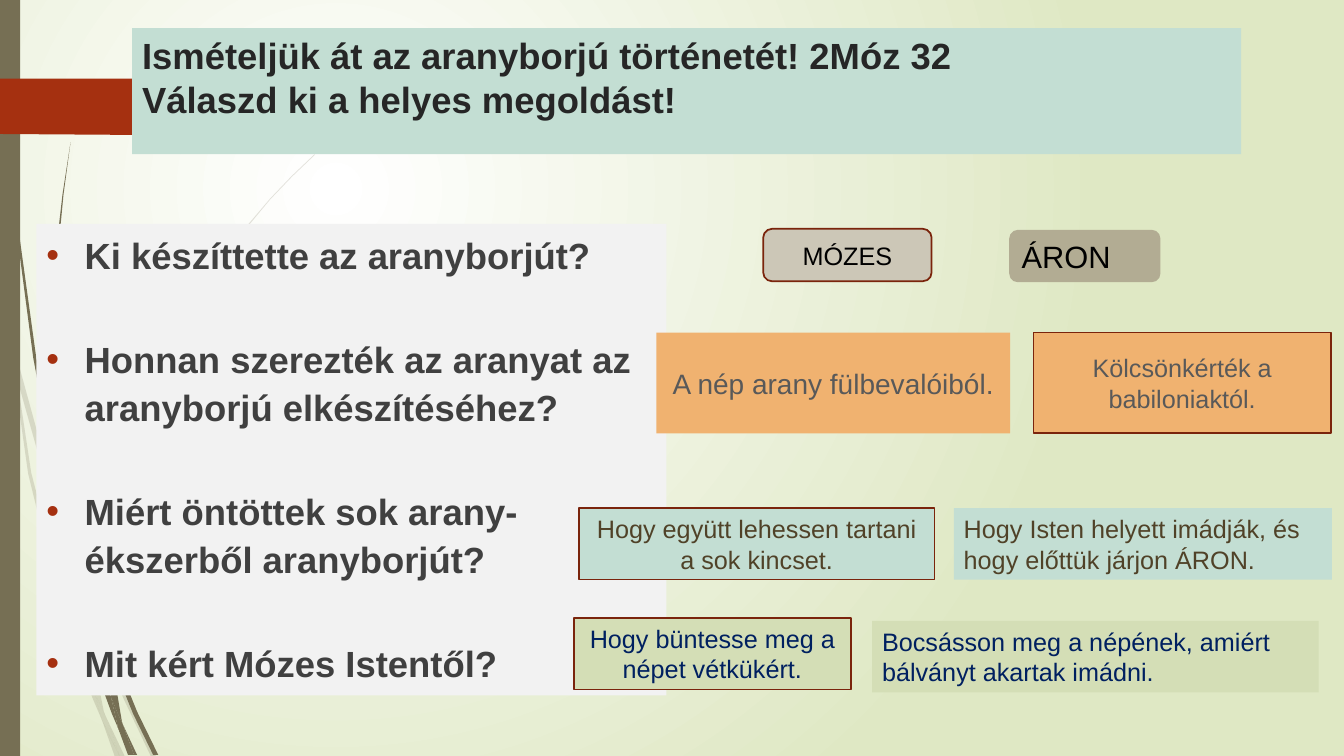
from lxml import etree
from pptx import Presentation, util as u
from pptx.dml.color import RGBColor
from pptx.enum import shapes, text
from pptx.oxml.ns import qn

WHITE = RGBColor(0xFF, 0xFF, 0xFF)
PALE_GREEN = RGBColor(0xDF, 0xE8, 0xC4)
OLIVE = RGBColor(0x76, 0x6F, 0x54)
RUST = RGBColor(0xA5, 0x30, 0x10)
DARK_RUST = RGBColor(0x7A, 0x24, 0x0C)
MINT = RGBColor(0xC3, 0xDE, 0xD3)
LIGHT_GREY = RGBColor(0xF2, 0xF2, 0xF2)
ORANGE = RGBColor(0xF0, 0xB2, 0x70)
LIME = RGBColor(0xD4, 0xDE, 0xB6)
SAND = RGBColor(0xCC, 0xC7, 0xB7)
TAUPE = RGBColor(0xB2, 0xAC, 0x93)
BLACK = RGBColor(0x00, 0x00, 0x00)
TITLE_INK = RGBColor(0x26, 0x26, 0x26)
BODY_INK = RGBColor(0x40, 0x40, 0x40)
GREY_INK = RGBColor(0x59, 0x59, 0x59)
BROWN_INK = RGBColor(0x50, 0x42, 0x28)
NAVY_INK = RGBColor(0x00, 0x20, 0x60)

ROWS = 75  # square grid cells, 75 to the slide's height
RECT = shapes.MSO_SHAPE.RECTANGLE
ROUNDED = shapes.MSO_SHAPE.ROUNDED_RECTANGLE
ALTERNATE = shapes.MSO_SHAPE.FLOWCHART_ALTERNATE_PROCESS
LEFT, CENTER = text.PP_ALIGN.LEFT, text.PP_ALIGN.CENTER
TOP, MIDDLE = text.MSO_ANCHOR.TOP, text.MSO_ANCHOR.MIDDLE

# Outlines of the grass blades, in grid cells
FAINT_BLADES = [
    [(1.1, 35), (.9, 32.2), (0, 28.2), (0, 29.9), (1, 34.4)],
    [(5.8, 52.2), (8.4, 59.9), (8.5, 58.6), (6.2, 52), (1.4, 34.5), (1.7, 37.6)],
    [(9.2, 60.7), (8.8, 59.6), (8.8, 61), (12.3, 69.4), (15, 75.1), (15.5, 75.1),
     (12.7, 69.2)],
    [(11.9, 75.1), (12.4, 75.1), (10.5, 71.1)],
    [(9.3, 68.3), (7, 61.9), (3.1, 46.9), (1.7, 37.6), (1.1, 35), (2.8, 47),
     (6.5, 62.1), (9.2, 69.3), (10.1, 71.4), (9.9, 70.7)],
    [(8.4, 59.9), (8.7, 64.6), (9.3, 68.3), (9.6, 69.2), (10.5, 71.1),
     (10.3, 70.6), (9.1, 64.6), (8.8, 61)],
    [(8.8, 58.4), (11, 46.2), (16, 34.9), (22.9, 24.5), (26.8, 19.8), (29, 17.5),
     (31.2, 15.4), (31.2, 15.3), (28.9, 17.5), (26.8, 19.7), (22.8, 24.4),
     (15.8, 34.8), (10.7, 46.1), (8.5, 58.4), (8.8, 59.6)],
    [(10.1, 71.4), (11.4, 75.1), (11.9, 75.1)],
    [(9.6, 69.2), (9.3, 68.3), (9.9, 70.7), (10.1, 71.4), (11.9, 75.1), (10.5, 71.1)],
]
DARK_BLADES = [
    [(.7, 11), (1.7, 23.3), (3.3, 35.5), (5.6, 47.7), (5.7, 48.1), (5.5, 45.7),
     (5.5, 45.3), (3.6, 35.5), (1.9, 23.2), (.8, 10.9), (.5, 4.8), (.4, 0),
     (.3, 0), (.4, 4.8)],
    [(11.3, 64.9), (11, 64.1), (11.1, 65.6), (13.2, 70.8), (15.2, 74.9),
     (15.7, 74.9), (13.6, 70.6)],
    [(11, 69.1), (9.8, 65.7), (7.2, 55.6), (6.4, 50.5), (5.7, 47.7), (6.8, 55.7),
     (9.3, 65.9), (11.1, 70.8), (11.7, 72.2), (11.6, 71.7)],
    [(6, 47.2), (5.8, 45.3), (5.4, 34.9), (5.8, 24.5), (6.3, 19.3), (7, 14.1),
     (6.2, 19.3), (5.6, 24.5), (5.2, 34.9), (5.5, 44.9)],
    [(13.3, 74.9), (13.6, 74.9), (12.2, 71.9)],
    [(11.7, 72.2), (12.7, 74.9), (13.1, 74.9)],
    [(10.6, 64.5), (11, 69.1), (11.6, 70.6), (12.2, 71.9), (12.1, 71.6),
     (11.1, 65.6), (10.9, 65.1)],
    [(11.6, 70.6), (11, 69.1), (11.6, 71.7), (11.7, 72.2), (13, 74.9),
     (13.3, 74.9), (12.2, 71.9)],
]
FLAG = [(17.3, 10.8), (14.8, 13.3), (14.6, 13.4), (0, 13.3), (0, 7.8), (14.6, 7.8),
        (14.8, 7.9), (17.3, 10.4), (17.4, 10.6)]

# Kind, place, fill, outlined, words, format
ANSWERS = [
    (ALTERNATE, (100.1, 22.8, 15, 5.2), TAUPE, False, "ÁRON", dict(size=22)),
    (RECT, (65.1, 33, 35.1, 10), ORANGE, False, "A nép arany fülbevalóiból.",
     dict(size=20, color=GREY_INK, align=CENTER)),
    (RECT, (94.6, 50.4, 37.5, 7.1), MINT, False,
     "Hogy Isten helyett imádják, és hogy előttük járjon ÁRON.",
     dict(color=BROWN_INK)),
    (RECT, (86.5, 61.6, 44.3, 7.1), LIME, False,
     "Bocsásson meg a népének, amiért bálványt akartak imádni.",
     dict(color=NAVY_INK)),
    (ROUNDED, (75.7, 22.7, 16.7, 5.2), SAND, True, "MÓZES", dict(align=CENTER)),
    (RECT, (102.5, 33, 29.5, 10), ORANGE, True, "Kölcsönkérték a babiloniaktól.",
     dict(color=GREY_INK, align=CENTER)),
    (RECT, (57.4, 50.4, 35.3, 7.1), MINT, True,
     "Hogy együtt lehessen tartani a sok kincset.",
     dict(color=BROWN_INK, align=CENTER)),
    (RECT, (56.9, 61.3, 27.5, 7.1), LIME, True,
     "Hogy büntesse meg a népet vétkükért.", dict(color=NAVY_INK, align=CENTER)),
]
QUESTIONS = [
    "Ki készíttette az aranyborjút?",
    "Honnan szerezték az aranyat az aranyborjú elkészítéséhez?",
    "Miért öntöttek sok arany- ékszerből aranyborjút?",
    "Mit kért Mózes Istentől?",
]


def write(para, words, size=18, color=BLACK, bold=False, align=LEFT, before=0, spacing=1.0):
    """Fill one paragraph; a newline becomes a line break."""
    para.alignment = align
    para.space_before, para.line_spacing = u.Pt(before), spacing
    for number, line in enumerate(words.split("\n")):
        if number:
            para.add_line_break()
        span = para.add_run()
        span.text = line
        span.font.name, span.font.size = "Arial", u.Pt(size)
        span.font.bold, span.font.color.rgb = bold, color


class Page:
    def __init__(self, deck):
        self.cell = deck.slide_height / ROWS
        self.slide = deck.slides.add_slide(deck.slide_layouts[1])

    def cells(self, values):
        return [u.Emu(round(value * self.cell)) for value in values]

    def background(self, inner, outer):
        fill = self.slide.background.fill
        fill.gradient()
        for stop, color in zip(fill.gradient_stops, (inner, outer)):
            stop.color.rgb = color
        gradient = self.slide.element.find(".//" + qn("a:gradFill"))
        gradient.remove(gradient.find(qn("a:lin")))
        circle = etree.SubElement(gradient, qn("a:path"), path="circle")
        etree.SubElement(circle, qn("a:fillToRect"),
                         l="50000", t="50000", r="100000", b="100000")

    def paint(self, shape, fill, outline=None):
        shape.shadow.inherit = False
        shape.fill.solid()
        shape.fill.fore_color.rgb = fill
        if outline is None:
            shape.line.fill.background()
        else:
            shape.line.color.rgb, shape.line.width = outline, u.Pt(1.25)

    def outline(self, points, fill, opacity=100):
        first, *rest = [self.cells(point) for point in points]
        builder = self.slide.shapes.build_freeform(*first)
        builder.add_line_segments(rest, close=True)
        shape = builder.convert_to_shape()
        self.paint(shape, fill)
        if opacity < 100:
            color = shape.element.spPr.find(".//" + qn("a:srgbClr"))
            etree.SubElement(color, qn("a:alpha"), val=str(opacity * 1000))

    def box(self, kind, place, fill, outline=None):
        shape = self.slide.shapes.add_shape(kind, *self.cells(place))
        self.paint(shape, fill, outline)
        return shape

    def answer(self, kind, place, fill, outlined, words, style):
        shape = self.box(kind, place, fill, DARK_RUST if outlined else None)
        frame = shape.text_frame
        frame.word_wrap, frame.vertical_anchor = True, MIDDLE
        write(frame.paragraphs[0], words, **style)

    def placeholder(self, index, place, fill):
        shape = self.slide.placeholders[index]
        shape.left, shape.top, shape.width, shape.height = self.cells(place)
        shape.fill.solid()
        shape.fill.fore_color.rgb = fill
        frame = shape.text_frame
        frame.word_wrap, frame.vertical_anchor = True, TOP
        frame.auto_size = text.MSO_AUTO_SIZE.NONE
        shape.element.getparent().append(shape.element)  # in front of the scenery
        return frame

    def title(self, words, place):
        frame = self.placeholder(0, place, MINT)
        write(frame.paragraphs[0], words, size=26, color=TITLE_INK, bold=True)

    def bullets(self, items, place):
        frame = self.placeholder(1, place, LIGHT_GREY)
        for number, item in enumerate(items):
            para = frame.add_paragraph() if number else frame.paragraphs[0]
            write(para, item, size=26, color=BODY_INK, bold=True,
                  before=40 if number else 0, spacing=1.1)
            properties = para._p.get_or_add_pPr()
            properties.set("marL", str(u.Inches(0.38)))
            properties.set("indent", str(-u.Inches(0.38)))
            color = etree.SubElement(properties, qn("a:buClr"))
            etree.SubElement(color, qn("a:srgbClr"), val=str(RUST))
            etree.SubElement(properties, qn("a:buFont"), typeface="Arial")
            etree.SubElement(properties, qn("a:buChar"), char="•")


def main():
    deck = Presentation()
    deck.slide_width, deck.slide_height = u.Inches(13.33), u.Inches(7.5)
    page = Page(deck)

    # Scenery
    page.background(WHITE, PALE_GREEN)
    for blade in FAINT_BLADES:
        page.outline(blade, OLIVE, opacity=20)
    for blade in DARK_BLADES:
        page.outline(blade, OLIVE)
    page.box(RECT, (0, 0, 2, ROWS), OLIVE)
    page.outline(FLAG, RUST)

    # Title and questions
    page.title("Ismételjük át az aranyborjú történetét! 2Móz 32\n"
               "Válaszd ki a helyes megoldást!", (13.1, 2.8, 110, 12.5))
    page.bullets(QUESTIONS, (3.6, 22.2, 62.5, 46.8))

    # Answers
    for answer in ANSWERS:
        page.answer(*answer)
    deck.save("out.pptx")


if __name__ == "__main__":
    main()
